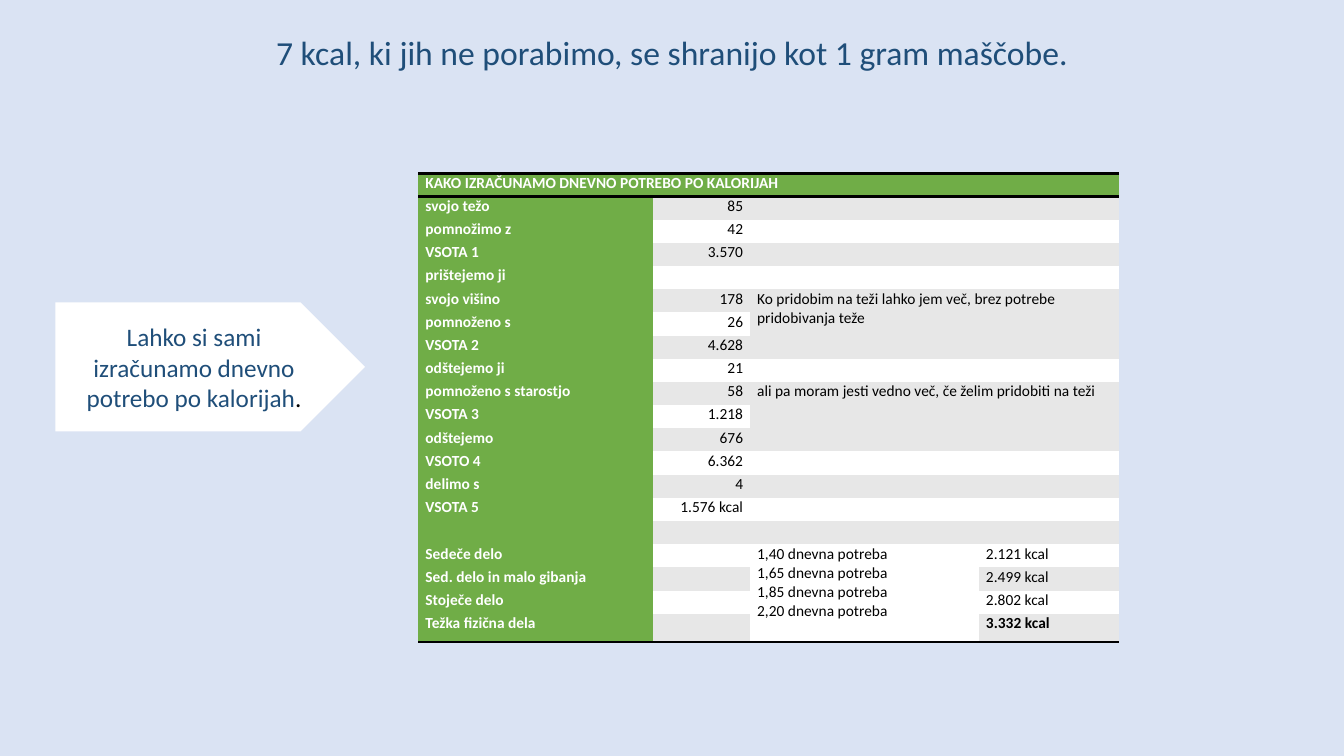
"""Build the slide on working out daily calorie needs."""
import pptx
import pptx.dml.color
import pptx.enum.shapes
import pptx.enum.text
import pptx.oxml
import pptx.oxml.ns
import pptx.util
from lxml import etree
from pptx.util import Inches

NAVY, GREEN, GREY, WHITE, BLACK = "1F4E79", "70AD47", "E7E7E7", "FFFFFF", "000000"
ALIGN = pptx.enum.text.PP_ALIGN
NO_GRID_STYLE = "{2D5ABB26-0587-4C30-8999-92F81FD0307C}"
HEADING = "KAKO IZRAČUNAMO DNEVNO POTREBO PO KALORIJAH"
STEPS = [
    ("svojo težo", "85"),
    ("pomnožimo z", "42"),
    ("VSOTA 1", "3.570"),
    ("prištejemo ji", ""),
    ("svojo višino", "178"),
    ("pomnoženo s", "26"),
    ("VSOTA 2", "4.628"),
    ("odštejemo ji", "21"),
    ("pomnoženo s starostjo", "58"),
    ("VSOTA 3", "1.218"),
    ("odštejemo", "676"),
    ("VSOTO 4", "6.362"),
    ("delimo s", "4"),
    ("VSOTA 5", "1.576 kcal"),
    ("", ""),
]
ACTIVITIES = [
    ("Sedeče delo", "1,40 dnevna potreba", "2.121 kcal"),
    ("Sed. delo in malo gibanja", "1,65 dnevna potreba", "2.499 kcal"),
    ("Stoječe delo", "1,85 dnevna potreba", "2.802 kcal"),
    ("Težka fizična dela", "2,20 dnevna potreba", "3.332 kcal"),
]
REMARKS = {
    5: "Ko pridobim na teži lahko jem več, brez potrebe pridobivanja teže",
    9: "ali pa moram jesti vedno več, če želim pridobiti na teži",
}
COLUMN_WIDTHS = [2.33, 0.96, 0.88, 1.39, 1.39]
ROW_HEIGHT, LAST_ROW_HEIGHT = 0.23, 0.28


def rgb(value):
    """Turn a hex string into a colour."""
    return pptx.dml.color.RGBColor.from_string(value)


def style(paragraph, size, color=None, bold=False, align=ALIGN.LEFT):
    """Set the font and alignment of one paragraph."""
    paragraph.alignment = align
    font = paragraph.font
    font.name, font.size, font.bold = "Calibri", pptx.util.Pt(size), bold
    if color:
        font.color.rgb = rgb(color)


def add_title(slide, text):
    """Add the centred title."""
    frame = slide.shapes.add_textbox(Inches(2.56), Inches(0.11), Inches(8.21), Inches(0.82)).text_frame
    frame.word_wrap = True
    frame.vertical_anchor = pptx.enum.text.MSO_ANCHOR.MIDDLE
    frame.text = text
    style(frame.paragraphs[0], 24, NAVY, align=ALIGN.CENTER)


def add_callout(slide, parts):
    """Add the white pentagon, each part of its text in its own colour."""
    callout = slide.shapes.add_shape(
        pptx.enum.shapes.MSO_SHAPE.PENTAGON, Inches(0.55), Inches(3), Inches(3.07), Inches(1.28))
    callout.shadow.inherit = False
    callout.fill.solid()
    callout.fill.fore_color.rgb = rgb(WHITE)
    callout.line.fill.background()
    callout.text_frame.word_wrap = True
    callout.text_frame.vertical_anchor = pptx.enum.text.MSO_ANCHOR.MIDDLE
    message = callout.text_frame.paragraphs[0]
    style(message, 18, align=ALIGN.CENTER)
    for text, color in parts:
        run = message.add_run()
        run.text = text
        run.font.color.rgb = rgb(color)


def add_border(cell, side):
    """Draw a black rule on one side of a cell, T or B."""
    rule = etree.SubElement(
        cell._tc.get_or_add_tcPr(), pptx.oxml.ns.qn(f"a:ln{side}"), w=str(pptx.util.Pt(2)))
    fill = etree.SubElement(rule, pptx.oxml.ns.qn("a:solidFill"))
    etree.SubElement(fill, pptx.oxml.ns.qn("a:srgbClr"), val=BLACK)


def fill_cell(cell, text, fill, color=BLACK, bold=False, align=ALIGN.LEFT):
    """Set the text, margins and fill of a cell."""
    cell.margin_left = cell.margin_right = Inches(0.07)
    cell.margin_top = cell.margin_bottom = 0
    cell.fill.solid()
    cell.fill.fore_color.rgb = rgb(fill)
    cell.text = text
    for paragraph in cell.text_frame.paragraphs:
        style(paragraph, 11, color, bold, align)
        if not text:
            etree.SubElement(paragraph._p, pptx.oxml.ns.qn("a:endParaRPr"), sz="1100")


def table_rows():
    """List the five texts of every row."""
    rows = [[HEADING, "", "", "", ""]]
    for number, (label, value) in enumerate(STEPS, 1):
        rows.append([label, value, REMARKS.get(number, ""), "", ""])
    factors = "\n".join(factor for _, factor, _ in ACTIVITIES)
    for number, (label, _, need) in enumerate(ACTIVITIES):
        rows.append([label, "", "" if number else factors, "", need])
    return rows


def add_calorie_table(slide):
    """Add the calculation table."""
    rows = table_rows()
    last = len(rows) - 1
    first_activity = len(STEPS) + 1
    heights = [ROW_HEIGHT] * last + [LAST_ROW_HEIGHT]
    frame = slide.shapes.add_table(
        len(rows), len(COLUMN_WIDTHS), Inches(4.15), Inches(1.72),
        Inches(sum(COLUMN_WIDTHS)), Inches(sum(heights)))
    table = frame.table
    table.first_row = table.horz_banding = False
    table._tbl.tblPr.find(pptx.oxml.ns.qn("a:tableStyleId")).text = NO_GRID_STYLE
    for column, width in zip(table.columns, COLUMN_WIDTHS):
        column.width = Inches(width)
    for row, height in zip(table.rows, heights):
        row.height = Inches(height)

    for r, texts in enumerate(rows):
        for c, text in enumerate(texts):
            cell = table.cell(r, c)
            if r == 0:
                add_border(cell, "T")
            if r in (0, last) or (r, c) == (first_activity, 2):
                add_border(cell, "B")
            if r == 0 or c == 0:
                fill_cell(cell, text, GREEN, WHITE, True)
            else:
                fill_cell(cell, text, GREY if r % 2 else WHITE, bold=(r, c) == (last, 4),
                          align=ALIGN.RIGHT if c == 1 else ALIGN.LEFT)

    table.cell(0, 0).merge(table.cell(0, 4))
    for r in REMARKS:
        table.cell(r, 2).merge(table.cell(r + 1, 4))
    table.cell(first_activity, 2).merge(table.cell(last, 3))


def main():
    """Build and save the presentation."""
    deck = pptx.Presentation()
    deck.slide_width, deck.slide_height = Inches(13.33), Inches(7.5)
    slide = deck.slides.add_slide(deck.slide_layouts[6])
    slide.background.fill.solid()
    slide.background.fill.fore_color.rgb = rgb("DAE3F3")
    add_title(slide, "7 kcal, ki jih ne porabimo, se shranijo kot 1 gram maščobe.")
    add_callout(slide, [("Lahko si sami izračunamo dnevno potrebo po kalorijah", NAVY), (".", BLACK)])
    add_calorie_table(slide)
    deck.save("out.pptx")


if __name__ == "__main__":
    main()
